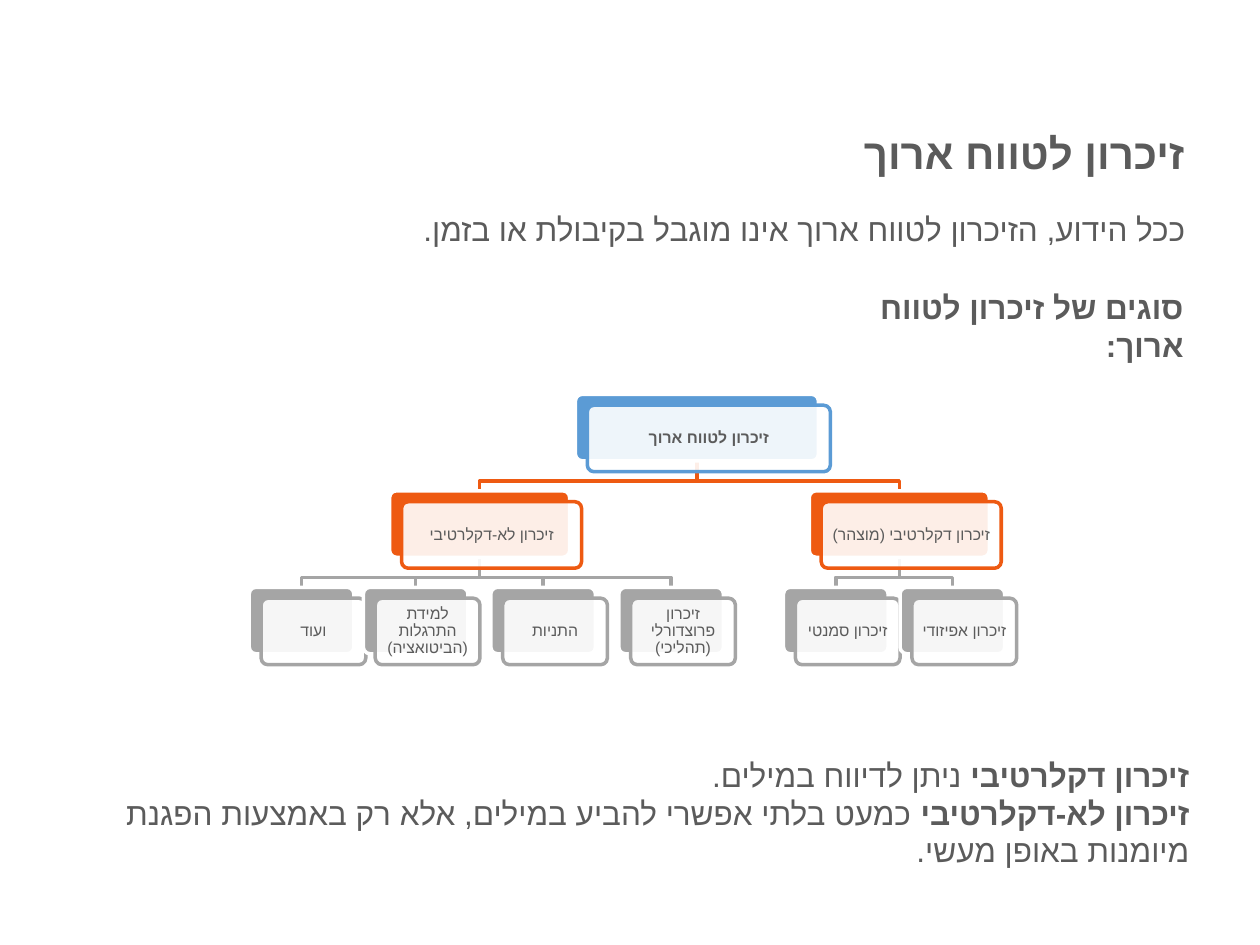
"""Build a Hebrew slide on long-term memory with a tree of its types."""
import pptx
import pptx.dml.color
import pptx.enum.shapes
import pptx.enum.text
import pptx.oxml
import pptx.oxml.ns
import pptx.util

Cm = pptx.util.Cm
Pt = pptx.util.Pt
RGBColor = pptx.dml.color.RGBColor
ALIGN = pptx.enum.text.PP_ALIGN
ANCHOR = pptx.enum.text.MSO_ANCHOR

TEXT = RGBColor(0x5B, 0x5B, 0x5B)
WHITE = RGBColor(0xFF, 0xFF, 0xFF)
BLUE = RGBColor(0x5B, 0x9B, 0xD5)
ORANGE = RGBColor(0xEE, 0x5A, 0x12)
GRAY = RGBColor(0xA5, 0xA5, 0xA5)

LEVEL_COLORS = (BLUE, ORANGE, GRAY)
LEVEL_WIDTHS = (4.9, 3.63, 2.11)
TREE_TOP, LEVEL_STEP, BOX_HEIGHT = 7.95, 1.945, 1.34
OFFSET_X, OFFSET_Y = 0.24, 0.22
ELBOW_GAP = 0.2

MEMORY_TREE = ("זיכרון לטווח ארוך", 14.05, [
    ("זיכרון לא-דקלרטיבי", 9.67, [
        ("ועוד", 6.08, []),
        ("למידת התרגלות (הביטואציה)", 8.38, []),
        ("התניות", 10.95, []),
        ("זיכרון פרוצדורלי (תהליכי)", 13.53, []),
    ]),
    ("זיכרון דקלרטיבי (מוצהר)", 18.13, [
        ("זיכרון סמנטי", 16.85, []),
        ("זיכרון אפיזודי", 19.2, []),
    ]),
])


def write_run(paragraph, text, size=18, bold=False, color=TEXT, name="Arial"):
    """Append formatted text that also names its font for Hebrew script."""
    run = paragraph.add_run()
    run.text = text
    font = run.font
    font.size, font.bold, font.name = Pt(size), bold, name
    font.color.rgb = color
    complex_font = pptx.oxml.parse_xml(
        f'<a:cs {pptx.oxml.ns.nsdecls("a")} typeface="{name}"/>')
    run._r.get_or_add_rPr().append(complex_font)


def set_right_to_left(paragraph, alignment):
    """Make a paragraph run right to left with the given alignment."""
    paragraph.alignment = alignment
    paragraph._p.get_or_add_pPr().set("rtl", "1")


class SlideBuilder:
    """Hold the current slide and its shared style."""

    def __init__(self, slide, line_width=2):
        self.slide = slide
        self.line_width = Pt(line_width)

    def outline(self, shape, color):
        shape.shadow.inherit = False
        shape.line.color.rgb = color
        shape.line.width = self.line_width

    def text_box(self, box, paragraphs, size=18, wrap=True, grow=True, anchor=ANCHOR.TOP):
        shape = self.slide.shapes.add_textbox(*map(Cm, box))
        frame = shape.text_frame
        frame.word_wrap = wrap
        frame.vertical_anchor = anchor
        if grow:
            frame.auto_size = pptx.enum.text.MSO_AUTO_SIZE.SHAPE_TO_FIT_TEXT
        for index, runs in enumerate(paragraphs):
            paragraph = frame.add_paragraph() if index else frame.paragraphs[0]
            set_right_to_left(paragraph, ALIGN.RIGHT)
            for text, bold in runs:
                write_run(paragraph, text, size=size, bold=bold)

    def rounded_box(self, left, top, width, fill, line):
        shape = self.slide.shapes.add_shape(
            pptx.enum.shapes.MSO_SHAPE.ROUNDED_RECTANGLE,
            Cm(left), Cm(top), Cm(width), Cm(BOX_HEIGHT))
        shape.adjustments[0] = 0.1
        shape.fill.solid()
        shape.fill.fore_color.rgb = fill
        self.outline(shape, line)
        return shape

    def node(self, text, center, level):
        color, width = LEVEL_COLORS[level], LEVEL_WIDTHS[level]
        left, top = center - width / 2, TREE_TOP + level * LEVEL_STEP
        self.rounded_box(left, top, width, color, WHITE)
        card = self.rounded_box(left + OFFSET_X, top + OFFSET_Y, width, WHITE, color)
        fill_color = card._element.spPr.find(".//" + pptx.oxml.ns.qn("a:srgbClr"))
        fill_color.append(pptx.oxml.parse_xml(
            f'<a:alpha {pptx.oxml.ns.nsdecls("a")} val="90000"/>'))
        frame = card.text_frame
        frame.word_wrap = True
        frame.vertical_anchor = ANCHOR.MIDDLE
        frame.margin_left = frame.margin_right = Cm(0.1)
        frame.margin_top = frame.margin_bottom = Cm(0.1)
        paragraph = frame.paragraphs[0]
        set_right_to_left(paragraph, ALIGN.CENTER)
        paragraph.line_spacing = 0.9
        write_run(paragraph, text, size=9, bold=level == 0)

    def branch(self, parent_center, child_center, child_level):
        child_top = TREE_TOP + child_level * LEVEL_STEP
        start_y = child_top - LEVEL_STEP + BOX_HEIGHT
        elbow_y = child_top - ELBOW_GAP
        builder = self.slide.shapes.build_freeform(Cm(parent_center), Cm(start_y))
        points = ((parent_center, elbow_y), (child_center, elbow_y), (child_center, child_top))
        builder.add_line_segments([(Cm(x), Cm(y)) for x, y in points], close=False)
        shape = builder.convert_to_shape()
        shape.fill.background()
        self.outline(shape, LEVEL_COLORS[child_level])

    def branches(self, tree, level=0):
        _, center, children = tree
        for child in children:
            self.branch(center, child[1], level + 1)
            self.branches(child, level + 1)

    def nodes(self, tree, level=0):
        text, center, children = tree
        self.node(text, center, level)
        for child in children:
            self.nodes(child, level + 1)


def main():
    presentation = pptx.Presentation()
    presentation.slide_width, presentation.slide_height = Cm(25.4), Cm(19.05)
    slide = presentation.slides.add_slide(presentation.slide_layouts[6])
    builder = SlideBuilder(slide)
    builder.text_box((1.27, 2.46, 22.86, 1.22), [[("זיכרון לטווח ארוך ", True)]],
                     size=24, grow=False, anchor=ANCHOR.MIDDLE)
    builder.text_box((1.27, 4.11, 22.89, 1.8), [
        [("ככל הידוע, הזיכרון לטווח ארוך אינו מוגבל בקיבולת או בזמן.", False)]])
    builder.text_box((16.36, 5.69, 7.75, 1.02),
                     [[("סוגים של זיכרון לטווח ארוך:", True)]], wrap=False)
    builder.branches(MEMORY_TREE)
    builder.nodes(MEMORY_TREE)
    builder.text_box((1.27, 15.11, 22.96, 2.57), [
        [("זיכרון דקלרטיבי ", True), ("ניתן לדיווח במילים.", False)],
        [("זיכרון לא-דקלרטיבי ", True),
         ("כמעט בלתי אפשרי להביע במילים, אלא רק באמצעות הפגנת מיומנות באופן מעשי.", False)],
    ])
    presentation.save("out.pptx")


if __name__ == "__main__":
    main()
